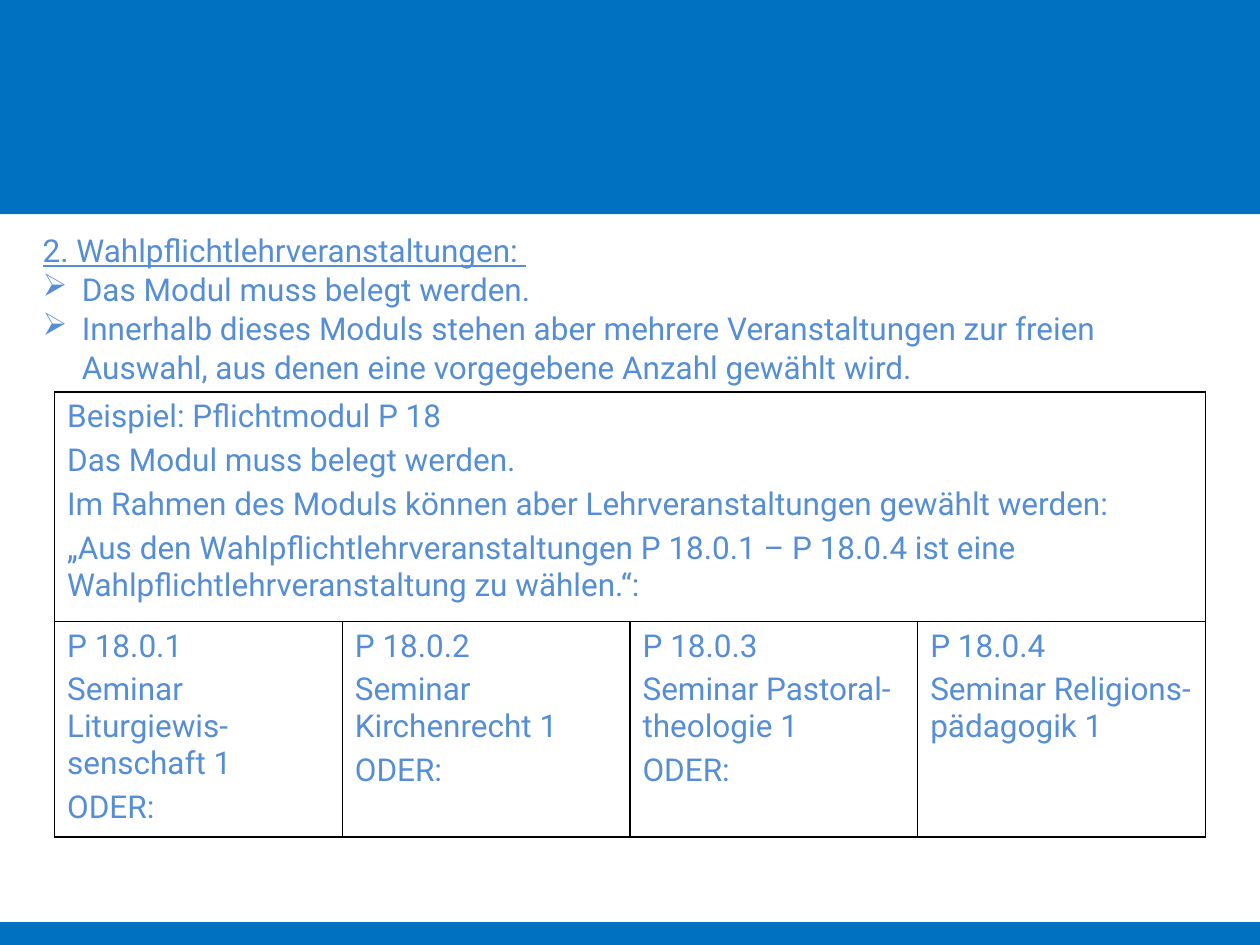
from dataclasses import dataclass

from lxml import etree
from pptx import Presentation
from pptx.dml.color import RGBColor
from pptx.enum.shapes import MSO_SHAPE
from pptx.oxml.ns import qn
from pptx.util import Cm, Pt

RECTANGLE = MSO_SHAPE.RECTANGLE
SLIDE_WIDTH, SLIDE_HEIGHT = 25.4, 19.05


@dataclass(frozen=True)
class Theme:
    band: str = "0070C0"
    text: str = "558ED5"
    border: str = "000000"
    font: str = "Roboto"
    size: float = 18
    border_width: float = 1
    space_before: float = 4
    line_spacing: float = 1.03
    bullet: str = "➢"
    bullet_indent: float = 0.79


class SlideBuilder:
    def __init__(self, slide, theme):
        self.slide = slide
        self.theme = theme

    def band(self, top, height):
        """Draw a filled strip across the whole slide."""
        shape = self.slide.shapes.add_shape(
            RECTANGLE, Cm(0), Cm(top), Cm(SLIDE_WIDTH), Cm(height))
        shape.shadow.inherit = False
        shape.fill.solid()
        shape.fill.fore_color.rgb = RGBColor.from_string(self.theme.band)
        shape.line.fill.background()

    def paragraphs(self, frame, lines):
        """Fill a text frame with one styled paragraph per line."""
        frame.text = "\n".join(lines)
        for para in frame.paragraphs:
            for span in para.runs:
                span.font.name = self.theme.font
                span.font.size = Pt(self.theme.size)
                span.font.color.rgb = RGBColor.from_string(self.theme.text)
        return frame.paragraphs

    def bullet(self, para):
        properties = para._p.get_or_add_pPr()
        indent = Cm(self.theme.bullet_indent)
        properties.set("marL", str(indent))
        properties.set("indent", str(-indent))
        color = etree.SubElement(properties, qn("a:buClr"))
        etree.SubElement(color, qn("a:srgbClr"), val=self.theme.text)
        etree.SubElement(properties, qn("a:buChar"), char=self.theme.bullet)

    def bullet_list(self, left, top, width, height, heading, points):
        box = self.slide.shapes.add_textbox(
            Cm(left), Cm(top), Cm(width), Cm(height))
        box.text_frame.word_wrap = True
        title, *items = self.paragraphs(box.text_frame, [heading, *points])
        title.runs[0].font.underline = True
        title.line_spacing = self.theme.line_spacing
        for para in items:
            para.line_spacing = self.theme.line_spacing
            self.bullet(para)

    def cell_borders(self, cell):
        properties = cell._tc.get_or_add_tcPr()
        for side in ("a:lnL", "a:lnR", "a:lnT", "a:lnB"):
            line = etree.SubElement(
                properties, qn(side), w=str(Pt(self.theme.border_width)))
            fill = etree.SubElement(line, qn("a:solidFill"))
            etree.SubElement(fill, qn("a:srgbClr"), val=self.theme.border)

    def module_table(self, left, top, width, row_heights, intro, courses):
        """Draw an intro row spanning all columns above one cell per course."""
        count = len(courses)
        table = self.slide.shapes.add_table(
            len(row_heights), count, Cm(left), Cm(top),
            Cm(width), Cm(sum(row_heights))).table
        table.first_row = False
        table.horz_banding = False
        for column in table.columns:
            column.width = Cm(width / count)
        for row, height in zip(table.rows, row_heights):
            row.height = Cm(height)
        for cell in table.iter_cells():
            self.cell_borders(cell)
            cell.fill.background()
        table.cell(0, 0).merge(table.cell(0, count - 1))

        contents = [(table.cell(0, 0), intro)]
        contents += zip(table.rows[1].cells, courses)
        for cell, lines in contents:
            for para in self.paragraphs(cell.text_frame, lines)[1:]:
                para.space_before = Pt(self.theme.space_before)


def main():
    deck = Presentation()
    deck.slide_width, deck.slide_height = Cm(SLIDE_WIDTH), Cm(SLIDE_HEIGHT)
    page = SlideBuilder(deck.slides.add_slide(deck.slide_layouts[6]), Theme())

    page.band(0, 4.32)
    page.band(18.59, 0.46)
    page.bullet_list(
        0.61, 4.52, 22.81, 3.33,
        "2. Wahlpflichtlehrveranstaltungen: ",
        ["Das Modul muss belegt werden.",
         "Innerhalb dieses Moduls stehen aber mehrere Veranstaltungen zur "
         "freien Auswahl, aus denen eine vorgegebene Anzahl gewählt wird."])
    page.module_table(
        1.1, 7.9, 23.2, [4.63, 3.97],
        ["Beispiel: Pflichtmodul P 18",
         "Das Modul muss belegt werden.",
         "Im Rahmen des Moduls können aber Lehrveranstaltungen gewählt werden:",
         "„Aus den Wahlpflichtlehrveranstaltungen P 18.0.1 – P 18.0.4 ist eine "
         "Wahlpflichtlehrveranstaltung zu wählen.“:"],
        [["P 18.0.1", "Seminar Liturgiewis-senschaft 1", "ODER:"],
         ["P 18.0.2", "Seminar Kirchenrecht 1", "ODER:"],
         ["P 18.0.3", "Seminar Pastoral-theologie 1", "ODER:"],
         ["P 18.0.4", "Seminar Religions-pädagogik 1"]])
    deck.save("out.pptx")


if __name__ == "__main__":
    main()
